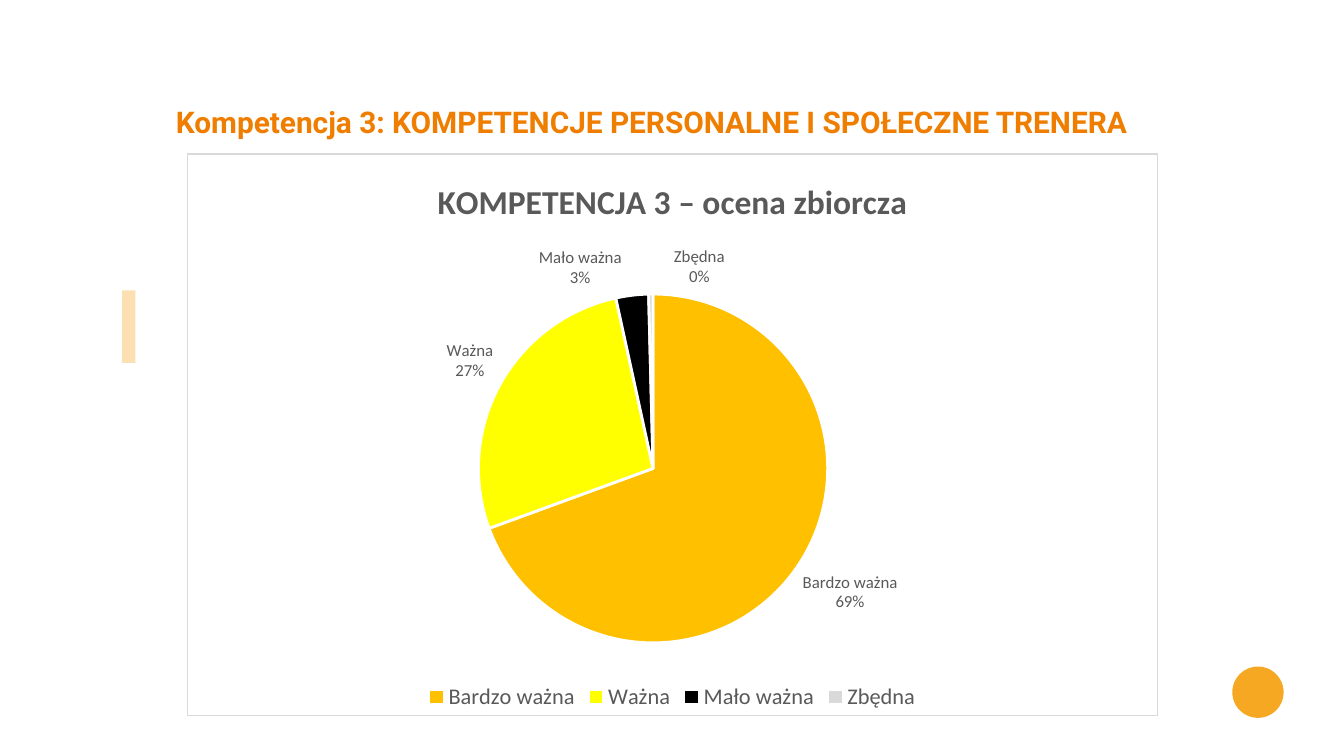
from copy import deepcopy

from lxml import etree
from pptx import Presentation
from pptx.chart.data import CategoryChartData
from pptx.dml.color import RGBColor
from pptx.enum.chart import XL_CHART_TYPE, XL_LABEL_POSITION, XL_LEGEND_POSITION
from pptx.enum.shapes import MSO_SHAPE
from pptx.enum.text import MSO_ANCHOR, PP_ALIGN
from pptx.oxml import parse_xml
from pptx.oxml.ns import nsdecls, qn
from pptx.util import Cm, Pt

PIE = XL_CHART_TYPE.PIE
OUTSIDE_END = XL_LABEL_POSITION.OUTSIDE_END
LEGEND_BOTTOM = XL_LEGEND_POSITION.BOTTOM
RECTANGLE, OVAL = MSO_SHAPE.RECTANGLE, MSO_SHAPE.OVAL
TOP, LEFT = MSO_ANCHOR.TOP, PP_ALIGN.LEFT

# Content
HEADING = "Kompetencja 3: KOMPETENCJE PERSONALNE I SPOŁECZNE TRENERA"
CHART_TITLE = "KOMPETENCJA 3 – ocena zbiorcza"
RATINGS = [  # name, share, slice colour
    ("Bardzo ważna", 69, "FFC000"),
    ("Ważna", 27, "FFFF00"),
    ("Mało ważna", 3, "000000"),
    ("Zbędna", 0.4, "D9D9D9"),  # a thin slice that rounds to 0%; a true zero gets no label
]
LABEL_SHIFTS = {2: -0.01, 3: 0.05}  # keeps the two top labels apart
PIE_AREA = {"x": 0.3, "y": 0.24, "w": 0.36, "h": 0.64}

THEME = {
    "heading_font": "Roboto", "chart_font": "Calibri",
    "heading": "EF7D00", "accent": "F7A823", "text": "595959",
    "border": "D9D9D9", "white": "FFFFFF",
    "heading_size": 16, "chart_title_size": 18, "legend_size": 12, "label_size": 9,
}


def style_font(font, face, size, color, bold=False):
    font.name = THEME[face]
    font.size = Pt(THEME[size])
    font.color.rgb = RGBColor.from_string(THEME[color])
    font.bold = bold


def add_accent(slide, kind, *box):
    accent = slide.shapes.add_shape(kind, *map(Cm, box))
    accent.shadow.inherit = False
    accent.fill.solid()
    accent.fill.fore_color.rgb = RGBColor.from_string(THEME["accent"])
    accent.line.fill.background()
    return accent


def manual_layout(**fractions):
    modes = "".join(f'<c:{axis}Mode val="edge"/>' for axis in "xy") if "w" in fractions else ""
    target = '<c:layoutTarget val="inner"/>' if modes else ""
    values = "".join(f'<c:{key} val="{value}"/>' for key, value in fractions.items())
    return parse_xml(f'<c:layout {nsdecls("c")}><c:manualLayout>{target}{modes}{values}'
                     "</c:manualLayout></c:layout>")


def style_labels(series):
    labels = series.data_labels
    labels.show_percentage = labels.show_category_name = True
    labels.show_value = False
    labels.number_format = "0%"
    labels.number_format_is_linked = False
    labels.position = OUTSIDE_END
    style_font(labels.font, "chart_font", "label_size", "text")

    # Category and share on separate lines, without leader lines
    root = labels._element
    separator = parse_xml(f'<c:separator {nsdecls("c")}>\n</c:separator>')
    root.find(qn("c:showBubbleSize")).addnext(separator)
    for old_leaders in root.findall(qn("c:showLeaderLines")):
        root.remove(old_leaders)
    separator.addnext(parse_xml(f'<c:showLeaderLines {nsdecls("c")} val="0"/>'))

    # Shifted labels share the common formatting
    shared = [part for part in root if part.tag != qn("c:showLeaderLines")]
    for place, (index, shift) in enumerate(LABEL_SHIFTS.items()):
        label = parse_xml(f'<c:dLbl {nsdecls("c")}><c:idx val="{index}"/></c:dLbl>')
        label.append(manual_layout(x=shift, y=0))
        label.extend([deepcopy(part) for part in shared])
        root.insert(place, label)


def style_frame(chart):
    frame = parse_xml(
        f'<c:spPr {nsdecls("c", "a")}>'
        f'<a:solidFill><a:srgbClr val="{THEME["white"]}"/></a:solidFill>'
        f'<a:ln w="{Pt(0.75)}"><a:solidFill><a:srgbClr val="{THEME["border"]}"/>'
        "</a:solidFill></a:ln></c:spPr>")
    chart._chartSpace.find(qn("c:chart")).addnext(frame)


def add_ratings_chart(slide):
    data = CategoryChartData()
    data.categories = [name for name, _, _ in RATINGS]
    data.add_series("Series 1", [share for _, share, _ in RATINGS])
    box = map(Cm, (3.53, 2.9, 18.36, 10.64))
    chart = slide.shapes.add_chart(PIE, *box, data).chart
    chart.font.name = THEME["chart_font"]
    chart.font.size = Pt(10)
    style_frame(chart)

    # Title and legend
    chart.has_title = True
    title = chart.chart_title.text_frame.paragraphs[0].add_run()
    title.text = CHART_TITLE
    style_font(title.font, "chart_font", "chart_title_size", "text", bold=True)
    chart.chart_title.include_in_layout = False
    chart.has_legend = True
    chart.legend.position = LEGEND_BOTTOM
    chart.legend.include_in_layout = False
    style_font(chart.legend.font, "chart_font", "legend_size", "text")

    # Slices
    plot = chart.plots[0]
    plot.vary_by_categories = True
    ratings = plot.series[0]
    for index, (_, _, color) in enumerate(RATINGS):
        piece = ratings.points[index].format
        piece.fill.solid()
        piece.fill.fore_color.rgb = RGBColor.from_string(color)
        piece.line.color.rgb = RGBColor.from_string(THEME["white"])
        piece.line.width = Pt(1.5)
    style_labels(ratings)

    # Pie position inside the frame
    plot_area = chart._chartSpace.find(".//" + qn("c:plotArea"))
    for old_layout in plot_area.findall(qn("c:layout")):
        plot_area.remove(old_layout)
    plot_area.insert(0, manual_layout(**PIE_AREA))


def main():
    deck = Presentation()
    deck.slide_width, deck.slide_height = Cm(25.4), Cm(14.29)
    slide = deck.slides.add_slide(deck.slide_layouts[5])

    # Accents: a pale bar and a solid dot
    bar = add_accent(slide, RECTANGLE, 2.31, 5.49, 0.25, 1.37)
    bar_color = bar.fill._xPr.find(".//" + qn("a:srgbClr"))
    etree.SubElement(bar_color, qn("a:alpha"), val="35000")
    add_accent(slide, OVAL, 23.29, 12.6, 0.97, 0.97)

    # Heading
    heading = slide.shapes.title
    heading.left, heading.top, heading.width, heading.height = map(Cm, (3.07, 1.83, 21.82, 2.18))
    frame = heading.text_frame
    frame.word_wrap = True
    frame.vertical_anchor = TOP
    frame.paragraphs[0].alignment = LEFT
    run = frame.paragraphs[0].add_run()
    run.text = HEADING
    style_font(run.font, "heading_font", "heading_size", "heading", bold=True)

    add_ratings_chart(slide)
    deck.save("out.pptx")


if __name__ == "__main__":
    main()
